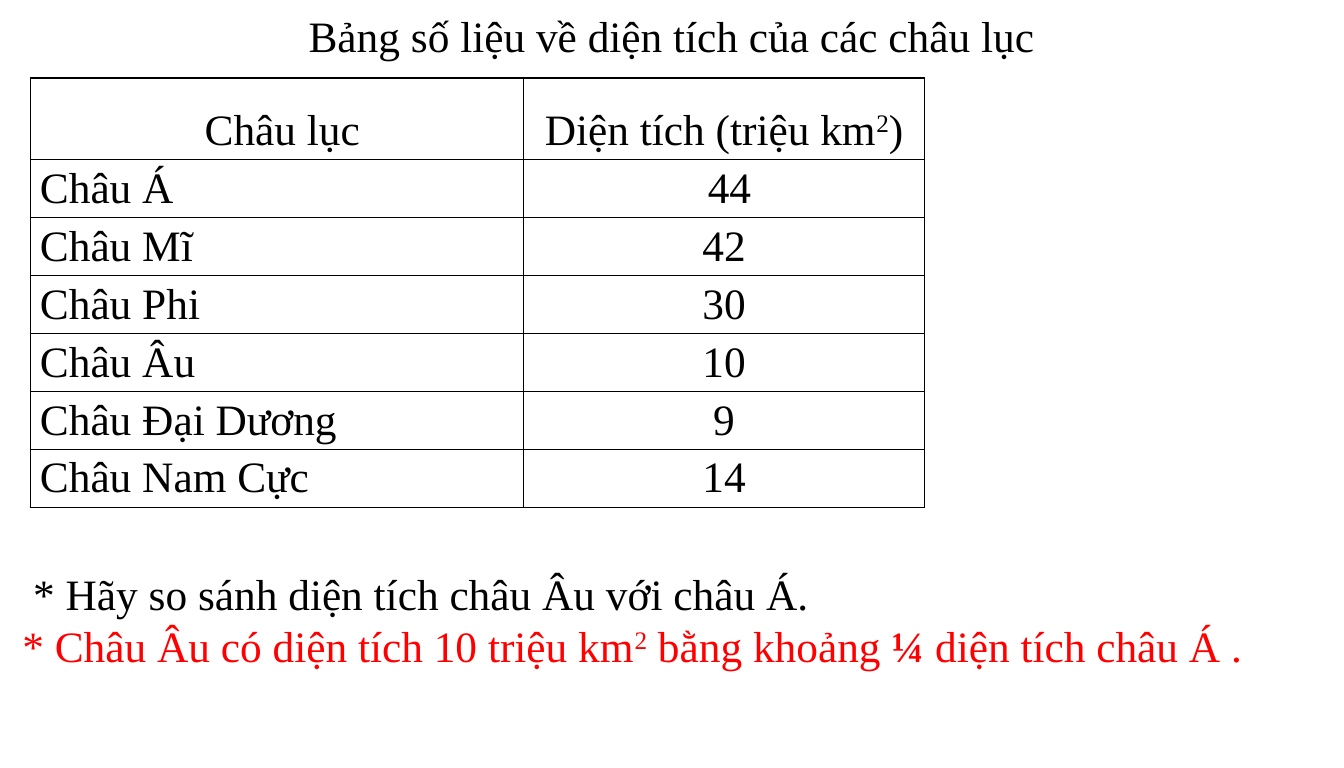
"""Builds a slide with a table of continent areas and a comparison below it."""
from lxml.etree import SubElement
from pptx import Presentation
from pptx.dml.color import RGBColor
from pptx.enum.text import MSO_ANCHOR, MSO_AUTO_SIZE, PP_ALIGN
from pptx.oxml import parse_xml
from pptx.oxml.ns import nsdecls, qn
from pptx.util import Inches, Pt

COLORS = {"ink": "000000", "answer": "FF0000", "paper": "FFFFFF"}
AREAS = [
    ("Châu Á", " 44"),
    ("Châu Mĩ", "42"),
    ("Châu Phi", "30"),
    ("Châu Âu", "10"),
    ("Châu Đại Dương", "9"),
    ("Châu Nam Cực", "14"),
]
HEADER = [[" Châu lục"], ["Diện tích (triệu km", ("2", "super"), ")"]]
QUESTION = [" * Hãy so sánh diện tích châu Âu với châu Á."]
ANSWER = [
    "* Châu Âu có diện tích 10 triệu km",
    ("2", "super"),
    " bằng khoảng ",
    ("¼", "bold"),
    " diện tích châu Á .",
]


class SlideBuilder:
    def __init__(self, prs):
        self.font = {"name": "Times New Roman", "size": Pt(32)}
        self.s = prs.slides.add_slide(prs.slide_layouts[6])
        self.s.background.fill.solid()
        self.s.background.fill.fore_color.rgb = RGBColor.from_string(COLORS["paper"])

    def paragraph(self, p, runs, color="ink", **layout):
        for name, value in layout.items():
            setattr(p, name, value)
        for run in runs:
            text, style = (run, None) if isinstance(run, str) else run
            r = p.add_run()
            r.text = text
            for name, value in {**self.font, "bold": style == "bold"}.items():
                setattr(r.font, name, value)
            r.font.color.rgb = RGBColor.from_string(COLORS[color])
            if style == "super":
                r._r.get_or_add_rPr().set("baseline", "30000")

    def text_box(self, box, paragraphs, align=PP_ALIGN.LEFT, **frame):
        tf = self.s.shapes.add_textbox(*map(Inches, box)).text_frame
        for name, value in {"word_wrap": True, **frame}.items():
            setattr(tf, name, value)
        for i, (runs, color) in enumerate(paragraphs):
            p = tf.add_paragraph() if i else tf.paragraphs[0]
            self.paragraph(p, runs, color, alignment=align)

    def borders(self, cell):
        tcPr = cell._tc.get_or_add_tcPr()
        for i, side in enumerate(("lnL", "lnR", "lnT", "lnB")):
            ln = parse_xml(f'<a:{side} {nsdecls("a")} w="12700"/>')
            fill = SubElement(ln, qn("a:solidFill"))
            SubElement(fill, qn("a:srgbClr"), val=COLORS["ink"])
            tcPr.insert(i, ln)

    def table(self, box, widths, heights, rows):
        table = self.s.shapes.add_table(len(rows), len(widths), *map(Inches, box)).table
        table.first_row = table.horz_banding = False
        for column, width in zip(table.columns, widths):
            column.width = Inches(width)
        for i, row in enumerate(rows):
            table.rows[i].height = Inches(heights[i])
            padding = Inches(0.03 if i else 0.02)
            cell_format = {
                "vertical_anchor": MSO_ANCHOR.MIDDLE,
                "margin_left": Inches(0.1),
                "margin_right": Inches(0.1),
                "margin_top": padding,
                "margin_bottom": padding,
            }
            for j, runs in enumerate(row):
                cell = table.cell(i, j)
                for name, value in cell_format.items():
                    setattr(cell, name, value)
                cell.fill.background()
                self.borders(cell)
                layout = {"alignment": PP_ALIGN.JUSTIFY if i and not j else PP_ALIGN.CENTER}
                if i == 0:
                    layout["line_spacing"] = 1.5
                self.paragraph(cell.text_frame.paragraphs[0], runs, **layout)


def main():
    prs = Presentation()
    prs.slide_width, prs.slide_height = Inches(441 / 32), Inches(63 / 8)
    slide = SlideBuilder(prs)
    slide.text_box(
        (0, 0.03, 13.78, 0.67),
        [(["Bảng số liệu về diện tích của các châu lục"], "ink")],
        PP_ALIGN.CENTER,
        vertical_anchor=MSO_ANCHOR.MIDDLE,
        margin_left=Inches(0.12),
        margin_right=Inches(0.12),
        margin_top=Inches(0.06),
        margin_bottom=Inches(0.06),
    )
    rows = [HEADER] + [[[name], [area]] for name, area in AREAS]
    heights = [0.8] + [0.55] * len(AREAS)
    slide.table((0.31, 0.8, 9.17, sum(heights)), (5.06, 4.11), heights, rows)
    slide.text_box(
        (0.13, 5.77, 13.51, 1.18),
        [(QUESTION, "ink"), (ANSWER, "answer")],
        auto_size=MSO_AUTO_SIZE.SHAPE_TO_FIT_TEXT,
    )
    prs.save("out.pptx")


if __name__ == "__main__":
    main()
